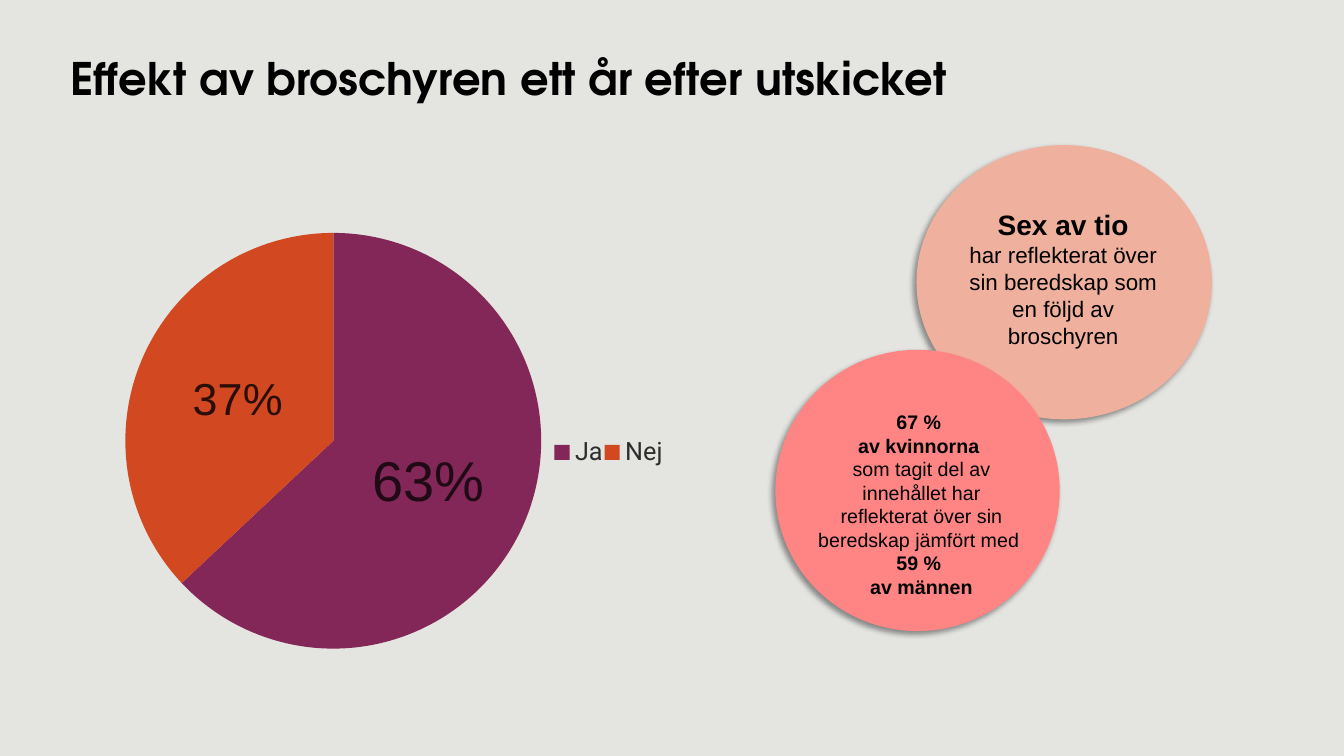
from lxml import etree
from pptx import Presentation
from pptx.chart.data import CategoryChartData
from pptx.dml.color import RGBColor
from pptx.enum.chart import XL_CHART_TYPE as ChartType, XL_LABEL_POSITION as LabelPosition
from pptx.enum.chart import XL_LEGEND_POSITION as LegendPosition
from pptx.enum.shapes import MSO_SHAPE as Preset
from pptx.enum.text import MSO_ANCHOR as Anchor, PP_ALIGN as Align
from pptx.oxml import parse_xml
from pptx.oxml.ns import nsdecls, qn
from pptx.util import Inches, Pt

COLORS = {
    "background": "E4E4E1", "text": "000000", "legend": "2D2D2D",
    "yes": "822757", "no": "D24821", "yes_label": "200A16", "no_label": "2A0E07",
    "peach": "F0B09E", "coral": "FF8585",
}
TITLE = "Effekt av broschyren ett år efter utskicket"
# category, share, slice colour, label colour, label size
ANSWERS = [
    ("Ja", 0.63, "yes", "yes_label", 40),
    ("Nej", 0.37, "no", "no_label", 32),
]
# left, top, width, height, colour
BUBBLES = [
    (9.09, 1.44, 2.93, 2.72, "peach"),
    (7.69, 3.47, 2.82, 2.79, "coral"),
]
# box, then lines of (text, size, bold)
BUBBLE_TEXTS = [
    ((9.43, 2.01, 2.23, 1.51), [
        ("Sex av tio", 20, True),
        ("har reflekterat över sin beredskap som en följd av broschyren", 16, False),
    ]),
    ((8.01, 4.02, 2.26, 1.99), [
        ("67 % ", 14, True),
        ("av kvinnorna ", 14, True),
        ("som tagit del av innehållet har reflekterat över sin beredskap jämfört med ", 14, False),
        ("59 % ", 14, True),
        ("av männen", 14, True),
    ]),
]
PLOT_LAYOUT = (0.078, 0.088, 0.596, 0.771)
LEGEND_LAYOUT = (0.69, 0.41, 0.16, 0.17)


def color(name):
    return RGBColor.from_string(COLORS[name])


def style(font, name, size, color_name, bold=False):
    font.name, font.size, font.bold = name, Pt(size), bold
    font.color.rgb = color(color_name)


def add_bubble(slide, left, top, width, height, color_name):
    bubble = slide.shapes.add_shape(
        Preset.OVAL, Inches(left), Inches(top), Inches(width), Inches(height))
    bubble.fill.solid()
    bubble.fill.fore_color.rgb = color(color_name)
    bubble.line.fill.background()
    bubble.shadow.inherit = False
    effects = bubble._element.spPr.find(qn("a:effectLst"))
    effects.append(parse_xml(
        f'<a:outerShdw {nsdecls("a")} blurRad="{Pt(4)}" dist="{Pt(3)}" dir="{135 * 60000}" '
        'algn="tr" rotWithShape="0"><a:srgbClr val="000000"><a:alpha val="40000"/>'
        '</a:srgbClr></a:outerShdw>'))


def add_text(slide, position, lines, font_name, align):
    box = slide.shapes.add_textbox(*map(Inches, position))
    box.text_frame.word_wrap = True
    para = box.text_frame.paragraphs[0]
    para.alignment = align
    for index, (text, size, bold) in enumerate(lines):
        if index:
            para.add_line_break()
        span = para.add_run()
        span.text = text
        style(span.font, font_name, size, "text", bold)
    return box


def make_layout(fractions, inner=False):
    """Manual chart layout from x, y, width and height fractions."""
    layout = etree.Element(qn("c:layout"))
    manual = etree.SubElement(layout, qn("c:manualLayout"))
    settings = [("layoutTarget", "inner")] if inner else []
    settings += [("xMode", "edge"), ("yMode", "edge"), *zip("xywh", fractions)]
    for tag, value in settings:
        etree.SubElement(manual, qn(f"c:{tag}")).set("val", str(value))
    return layout


def add_pie(slide):
    data = CategoryChartData(number_format="0%")
    data.categories = [answer[0] for answer in ANSWERS]
    data.add_series("Series 1", [answer[1] for answer in ANSWERS])
    chart = slide.shapes.add_chart(
        ChartType.PIE, Inches(0.7), Inches(1.84), Inches(6.93), Inches(5.35), data).chart
    chart.has_title = False
    style(chart.font, "Roboto", 18, "text")
    chart.plots[0].vary_by_categories = True

    points = chart.plots[0].series[0].points
    for index, (_, _, fill_name, label_name, size) in enumerate(ANSWERS):
        point = points[index]
        point.format.fill.solid()
        point.format.fill.fore_color.rgb = color(fill_name)
        point.format.line.fill.background()
        style(point.data_label.font, "Arial", size, label_name)
        point.data_label.position = LabelPosition.CENTER

    chart.has_legend = True
    legend = chart.legend
    legend.position = LegendPosition.RIGHT
    legend.include_in_layout = False
    style(legend.font, "Roboto", 18, "legend")
    plot_area = chart._chartSpace.chart.plotArea
    for parent, layout in ((plot_area, make_layout(PLOT_LAYOUT, inner=True)),
                           (legend._element, make_layout(LEGEND_LAYOUT))):
        for previous in parent.findall(qn("c:layout")):
            parent.remove(previous)
        parent.insert(0 if parent is plot_area else 1, layout)


def main():
    deck = Presentation()
    deck.slide_width, deck.slide_height = Inches(13.33), Inches(7.5)
    slide = deck.slides.add_slide(deck.slide_layouts[6])
    slide.background.fill.solid()
    slide.background.fill.fore_color.rgb = color("background")

    for bubble in BUBBLES:
        add_bubble(slide, *bubble)
    title = add_text(slide, (0.6, 0.52, 11.5, 0.56), [(TITLE, 32, True)],
                     "TeX Gyre Adventor", Align.LEFT)
    title.text_frame.vertical_anchor = Anchor.MIDDLE
    title.text_frame.paragraphs[0].line_spacing = 0.9
    add_pie(slide)
    for position, lines in BUBBLE_TEXTS:
        add_text(slide, position, lines, "Arial", Align.CENTER)
    deck.save("out.pptx")


if __name__ == "__main__":
    main()
